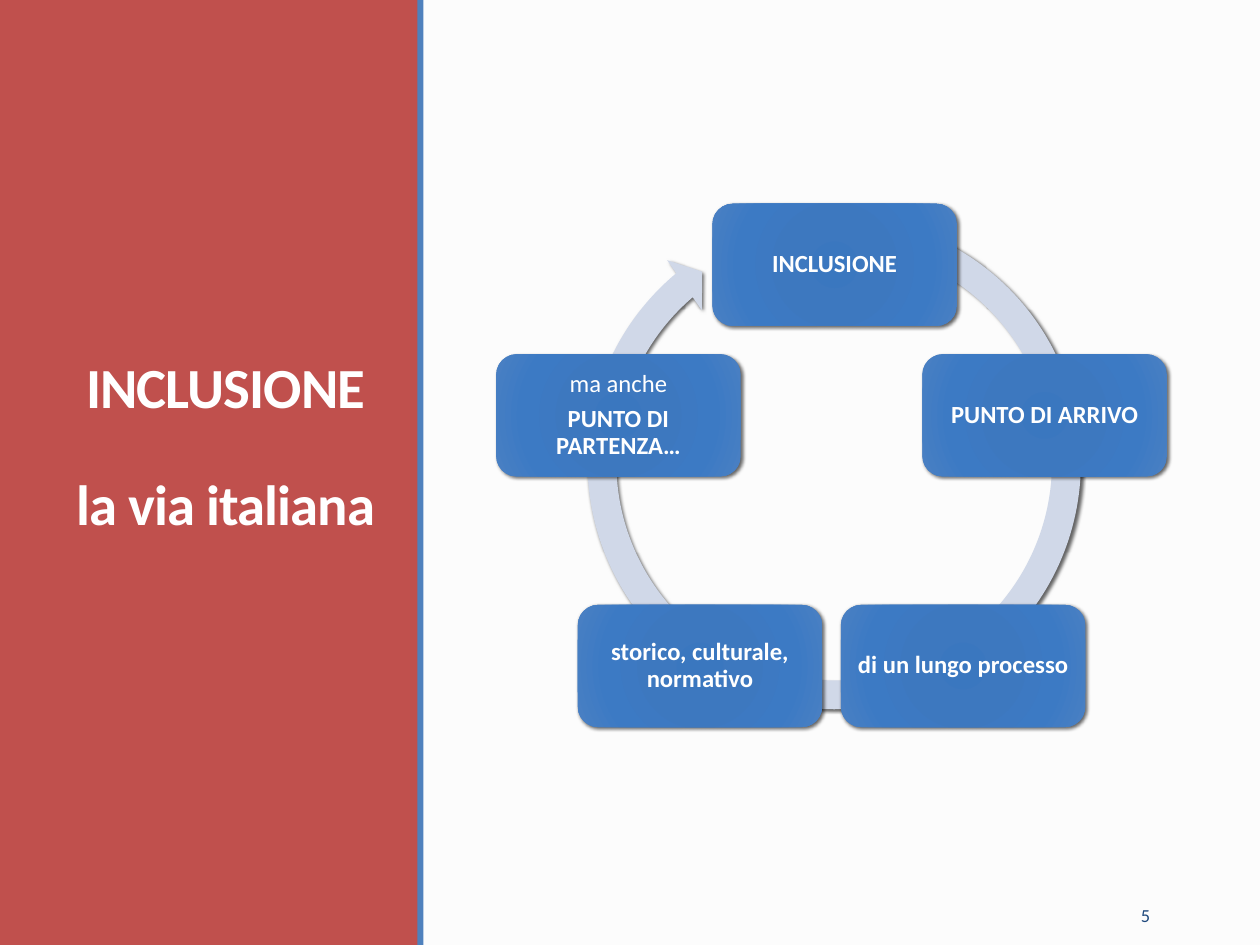
from lxml import etree
from pptx import Presentation
from pptx.dml.color import RGBColor
from pptx.enum import shapes, text
from pptx.oxml import ns
from pptx.util import Inches, Pt


class Theme:
    font = "Calibri"
    back = "FCFCFC"
    panel = "C0504D"
    stripe = "4F81BD"
    ring = "D0D8E8"
    light = "FFFFFF"
    navy = "1F497D"
    glow = [(0, "3A77BF"), (34, "3D78BF"), (70, "3C7AC4"), (100, "4A80C3")]
    title, body, small = Pt(46.1), Pt(20), Pt(14.9)


def add_block(kind, box, color, shade=False):
    """Add a borderless shape, with a soft drop shadow if shade is set."""
    shape = slide.shapes.add_shape(kind, *map(Inches, box))
    shape.fill.solid()
    shape.fill.fore_color.rgb = RGBColor.from_string(color)
    shape.line.fill.background()
    shape.shadow.inherit = False
    if shade:
        props = shape._element.spPr
        props.find(ns.qn("a:effectLst")).append(etree.fromstring(
            f'<a:outerShdw {ns.nsdecls("a")} blurRad="{Pt(3)}" dist="{Pt(2)}" '
            f'dir="{45 * 60000}" algn="ctr" rotWithShape="0">'
            '<a:srgbClr val="000000"><a:alpha val="60000"/></a:srgbClr></a:outerShdw>'))
    return shape


def style(par, size, color, bold, align):
    par.alignment = align
    for run in par.runs:
        font = run.font
        font.name, font.size, font.bold = Theme.font, size, bold
        font.color.rgb = RGBColor.from_string(color)


prs = Presentation()
prs.slide_width, prs.slide_height = Inches(14.22), Inches(10.67)
slide = prs.slides.add_slide(prs.slide_layouts[5])
slide.background.fill.solid()
slide.background.fill.fore_color.rgb = RGBColor.from_string(Theme.back)
kinds, align = shapes.MSO_SHAPE, text.PP_ALIGN

# Side panel and title
panel = add_block(kinds.RECTANGLE, (0, 0, 4.73, 10.67), Theme.panel)
stripe = add_block(kinds.RECTANGLE, (4.71, 0, 0.07, 10.67), Theme.stripe)

title = slide.shapes.title
title.left, title.top, title.width, title.height = map(Inches, (0.53, 0.92, 4.04, 6.17))
panel._element.addprevious(title._element)
stripe._element.addnext(title._element)
frame = title.text_frame
frame.text = "INCLUSIONE\nla via italiana"
frame.word_wrap = True
frame.auto_size = text.MSO_AUTO_SIZE.NONE
frame.vertical_anchor = text.MSO_ANCHOR.BOTTOM
frame.margin_bottom = Inches(1.03)
for par in frame.paragraphs:
    style(par, Theme.title, Theme.light, True, align.CENTER)
    par.line_spacing = 0.85
    for run in par.runs:
        run.font._element.set("spc", "-70")
frame.paragraphs[1].space_before = Pt(48)

# Cycle: ring arrow, then the five steps clockwise from the top
ring = add_block(kinds.CIRCULAR_ARROW, (6.45, 2.26, 5.93, 5.93), Theme.ring, True)
for i, value in enumerate((0.055, 3.307, 137.92, 173.762, 0.058)):
    ring.adjustments[i] = value

stops = "".join(f'<a:gs pos="{pos * 1000}"><a:srgbClr val="{color}"/></a:gs>'
                for pos, color in Theme.glow)
glow = (f'<a:gradFill {ns.nsdecls("a")} rotWithShape="1"><a:gsLst>{stops}</a:gsLst>'
        '<a:path path="circle"><a:fillToRect l="100000" t="100000" r="100000" b="100000"/>'
        '</a:path></a:gradFill>')
steps = [
    ("INCLUSIONE", 8.04, 2.3),
    ("PUNTO DI ARRIVO", 10.41, 4),
    ("di un lungo processo", 9.49, 6.83),
    ("storico, culturale, normativo", 6.52, 6.83),
    ("ma anche\nPUNTO DI PARTENZA…", 5.6, 4),
]
for words, left, top in steps:
    step = add_block(kinds.ROUNDED_RECTANGLE, (left, top, 2.76, 1.38), Theme.stripe, True)
    props = step._element.spPr
    props.replace(props.find(ns.qn("a:solidFill")), etree.fromstring(glow))
    frame = step.text_frame
    frame.text = words
    frame.word_wrap = True
    frame.vertical_anchor = text.MSO_ANCHOR.MIDDLE
    frame.margin_left = frame.margin_right = Inches(0.08)
    frame.margin_top = frame.margin_bottom = Inches(0.08)
    for par in frame.paragraphs:
        style(par, Theme.body, Theme.light, par.text != "ma anche", align.CENTER)
        par.line_spacing = 0.9
        par.space_after = Pt(7)

# Page number
page = slide.shapes.add_textbox(*map(Inches, (11.55, 10.05, 1.53, 0.57))).text_frame
page.text = "5"
page.word_wrap = True
page.vertical_anchor = text.MSO_ANCHOR.MIDDLE
style(page.paragraphs[0], Theme.small, Theme.navy, False, align.RIGHT)

prs.save("out.pptx")
